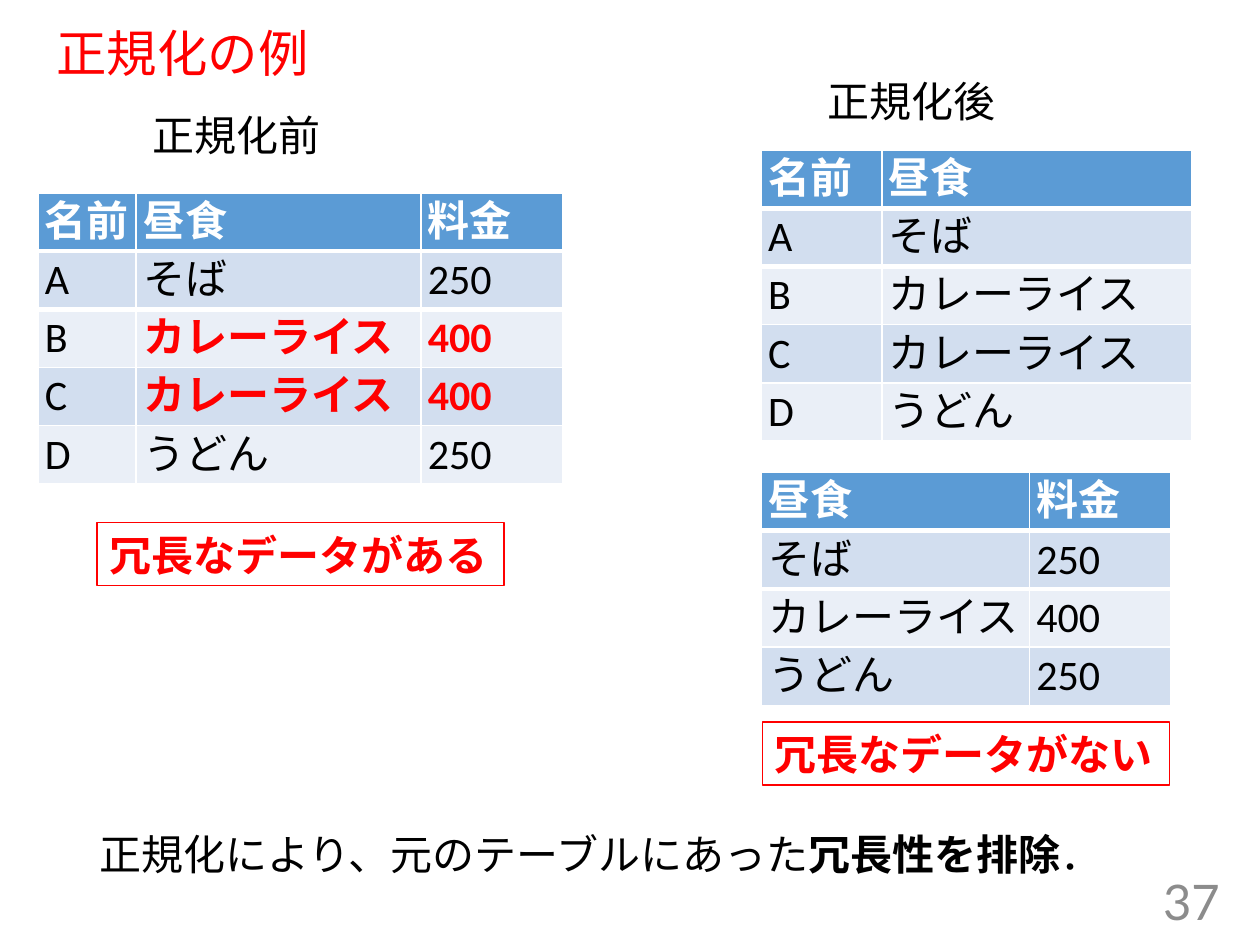
from lxml.etree import SubElement
from pptx import Presentation
from pptx.dml.color import RGBColor
from pptx.enum.shapes import MSO_SHAPE as Shape
from pptx.enum.text import MSO_ANCHOR as Anchor, MSO_AUTO_SIZE as Fit, PP_ALIGN as Align
from pptx.oxml import parse_xml
from pptx.oxml.ns import nsdecls, qn
from pptx.util import Inches, Pt

RED, BLACK, WHITE, GREY = "FF0000", "000000", "FFFFFF", "8C8C8C"
HEAD, BANDS = "5B9BD5", ("D2DEEF", "EAEFF7")
ROW, DRAWN = 0.28, 0.457  # least row height, height once text fills it

# Content: a run is (text, colour, bold)
LABELS = [  # box, runs
    ((1.11, 0.82, 1.55, 0.5), [("正規化前", BLACK, False)]),
    ((6.47, 0.55, 1.55, 0.5), [("正規化後", BLACK, False)]),
    ((0.69, 6.53, 8.28, 0.5), [("正規化により、元のテーブルにあった", BLACK, False),
                               ("冗長性を排除", BLACK, True),
                               ("．", BLACK, False)]),
]
FRAMED = [
    ((0.77, 4.15, 3.23, 0.5), [("冗長なデータがある", RED, True)]),
    ((6.05, 5.73, 3.23, 0.5), [("冗長なデータがない", RED, True)]),
]
TABLES = [  # left, top, column widths, rows, redundant values
    (0.3, 1.53, (0.78, 2.26, 1.13),
     [("名前", "昼食", "料金"), ("A", "そば", "250"), ("B", "カレーライス", "400"),
      ("C", "カレーライス", "400"), ("D", "うどん", "250")],
     ("カレーライス", "400")),
    (6.04, 1.19, (0.96, 2.46),
     [("名前", "昼食"), ("A", "そば"), ("B", "カレーライス"),
      ("C", "カレーライス"), ("D", "うどん")], ()),
    (6.04, 3.75, (2.13, 1.12),
     [("昼食", "料金"), ("そば", "250"), ("カレーライス", "400"), ("うどん", "250")], ()),
]


def color(code):
    return RGBColor.from_string(code)


def write(para, runs, size=24, face="Calibri"):
    for text, code, bold in runs:
        run = para.add_run()
        run.text = text
        font = run.font
        font.size, font.name, font.bold = Pt(size), face, bold
        font.color.rgb = color(code)
        # Same face for East Asian text, so line heights agree
        SubElement(run._r.get_or_add_rPr(), qn("a:ea"), typeface=face)


def add_text(slide, box, runs, size=24, face="Calibri", wrap=False, framed=False):
    spot = [Inches(v) for v in box]
    if framed:
        shape = slide.shapes.add_shape(Shape.RECTANGLE, *spot)
        shape.shadow.inherit = False
        shape.fill.background()
        shape.line.color.rgb = color(RED)
        shape.line.width = Pt(0.75)
    else:
        shape = slide.shapes.add_textbox(*spot)
    frame = shape.text_frame
    frame.word_wrap = wrap
    frame.auto_size = Fit.NONE if wrap else Fit.SHAPE_TO_FIT_TEXT
    frame.vertical_anchor = Anchor.MIDDLE if wrap else Anchor.TOP
    para = frame.paragraphs[0]
    para.alignment = Align.LEFT
    write(para, runs, size, face)
    return para


def add_rule(cell, side, width):
    line = parse_xml(
        f'<a:{side} {nsdecls("a")} w="{Pt(width)}"><a:solidFill>'
        f'<a:srgbClr val="{WHITE}"/></a:solidFill></a:{side}>')
    cell._tc.get_or_add_tcPr().insert(0, line)


def add_table(slide, left, top, widths, rows, marked):
    holder = slide.shapes.add_table(
        len(rows), len(widths), Inches(left), Inches(top),
        Inches(sum(widths)), Inches(ROW * len(rows)))
    table = holder.table
    for col, width in zip(table.columns, widths):
        col.width = Inches(width)
    for r, row in enumerate(rows):
        for c, text in enumerate(row):
            cell = table.cell(r, c)
            cell.margin_left = cell.margin_right = Pt(4)
            cell.margin_top = cell.margin_bottom = Pt(2)
            cell.fill.solid()
            cell.fill.fore_color.rgb = color(BANDS[(r - 1) % 2] if r else HEAD)
            if r < 2:  # thick rule under the header
                add_rule(cell, "lnT" if r else "lnB", 3)
            hot = text in marked
            ink = WHITE if r == 0 else RED if hot else BLACK
            write(cell.text_frame.paragraphs[0], [(text, ink, r == 0 or hot)])
    holder.height = Inches(DRAWN * len(rows))


def main():
    deck = Presentation()
    deck.slide_width, deck.slide_height = Inches(10), Inches(7.5)
    slide = deck.slides.add_slide(deck.slide_layouts[6])

    # Title and page number
    title = add_text(slide, (0.35, 0.19, 9.25, 0.51),
                     [("正規化の例", RED, False)], 28.8, "Arial", wrap=True)
    title.line_spacing = 0.9
    page = add_text(slide, (7.53, 6.95, 2.25, 0.4),
                    [("37", GREY, False)], 28, "Lato", wrap=True)
    page.alignment = Align.RIGHT

    # Tables, labels and framed remarks
    for item in TABLES:
        add_table(slide, *item)
    for box, runs in LABELS:
        add_text(slide, box, runs)
    for box, runs in FRAMED:
        add_text(slide, box, runs, framed=True)

    deck.save("out.pptx")


if __name__ == "__main__":
    main()
